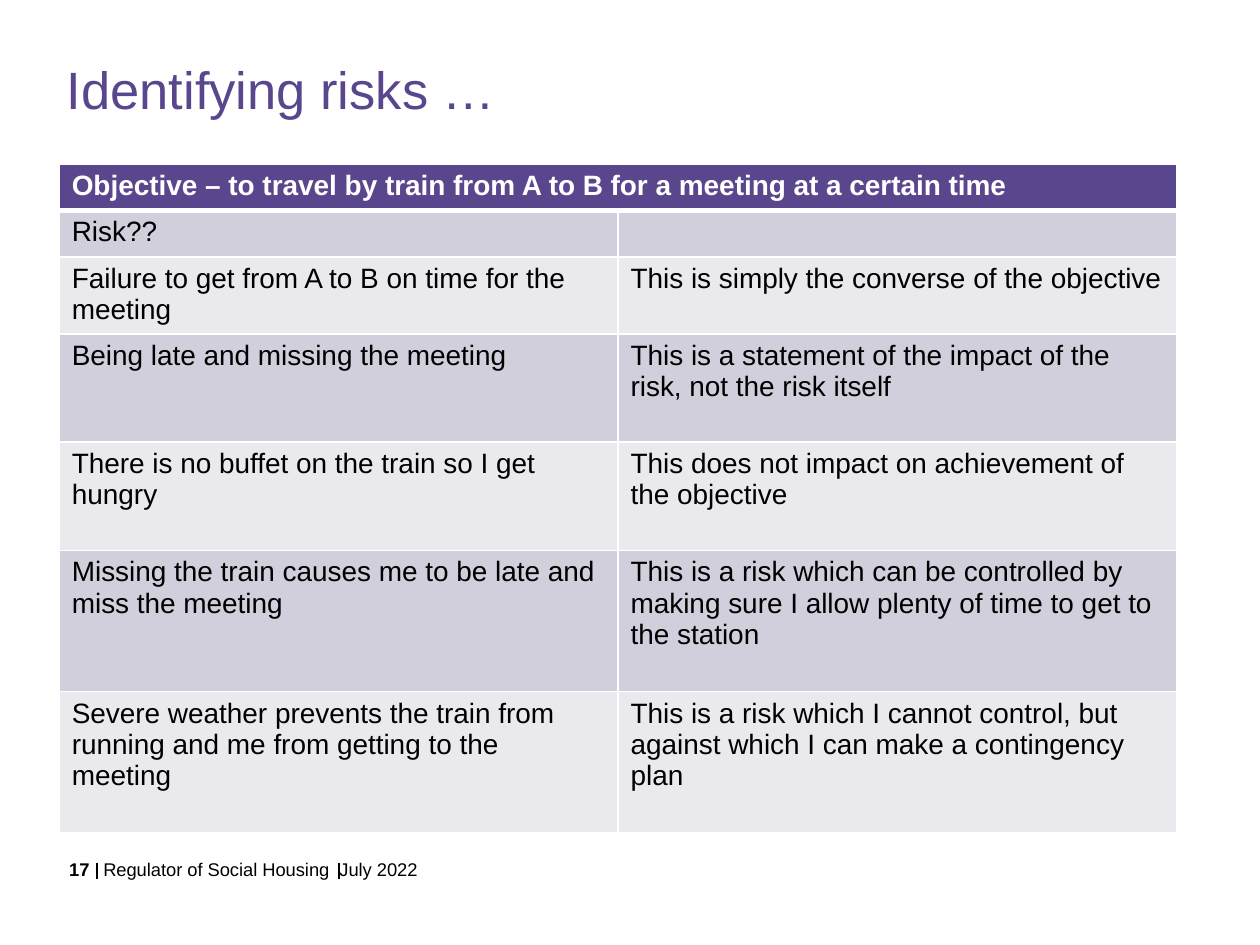
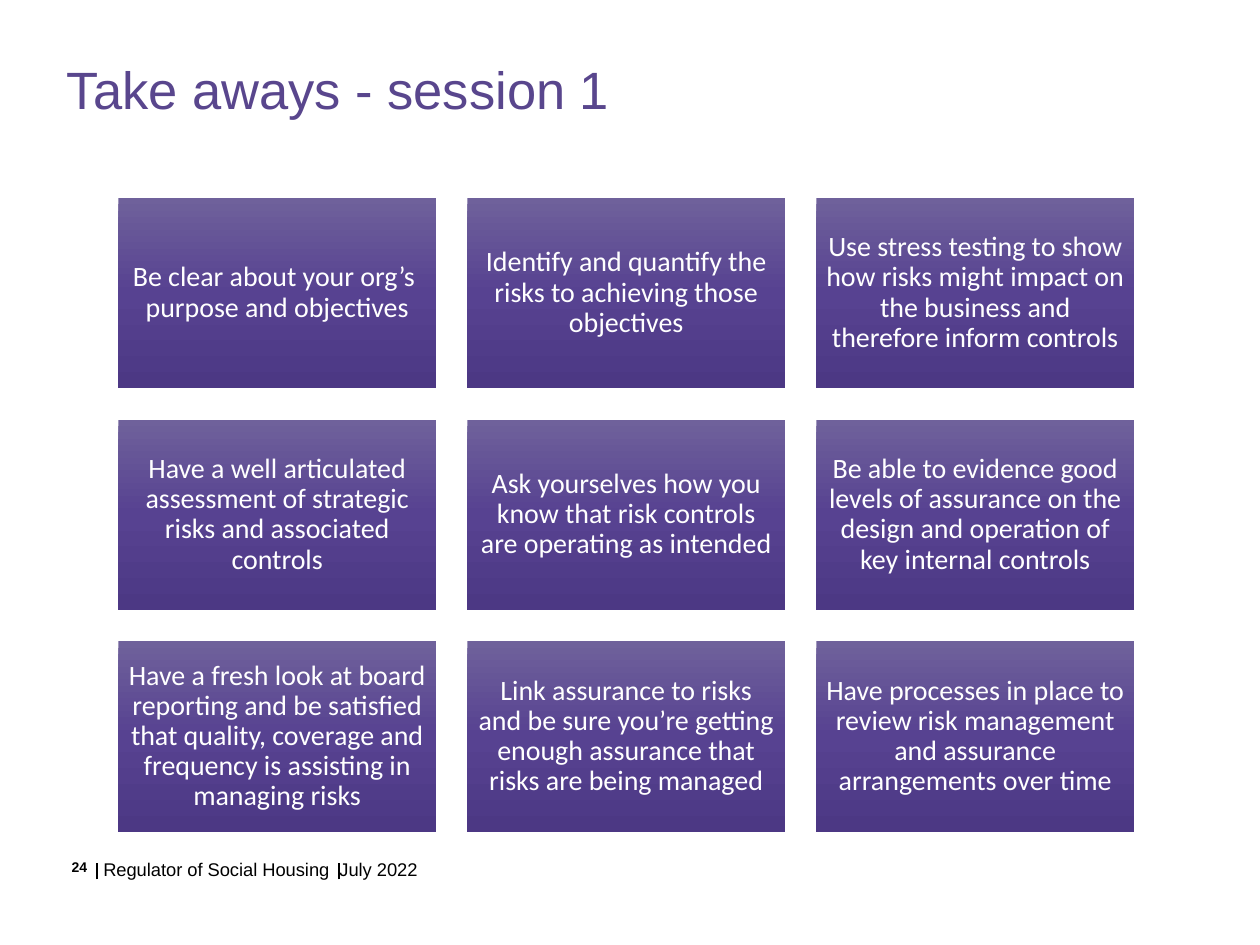
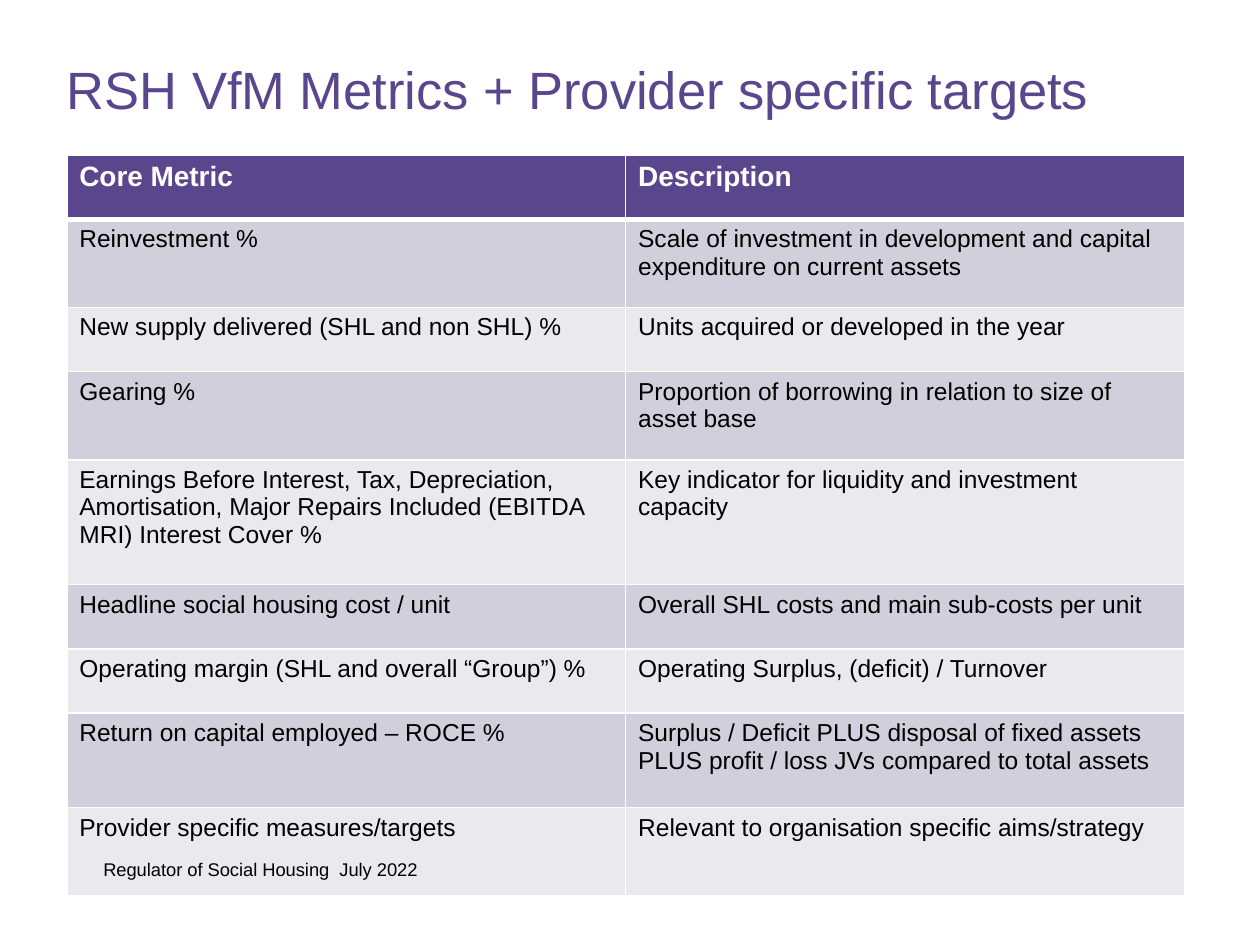
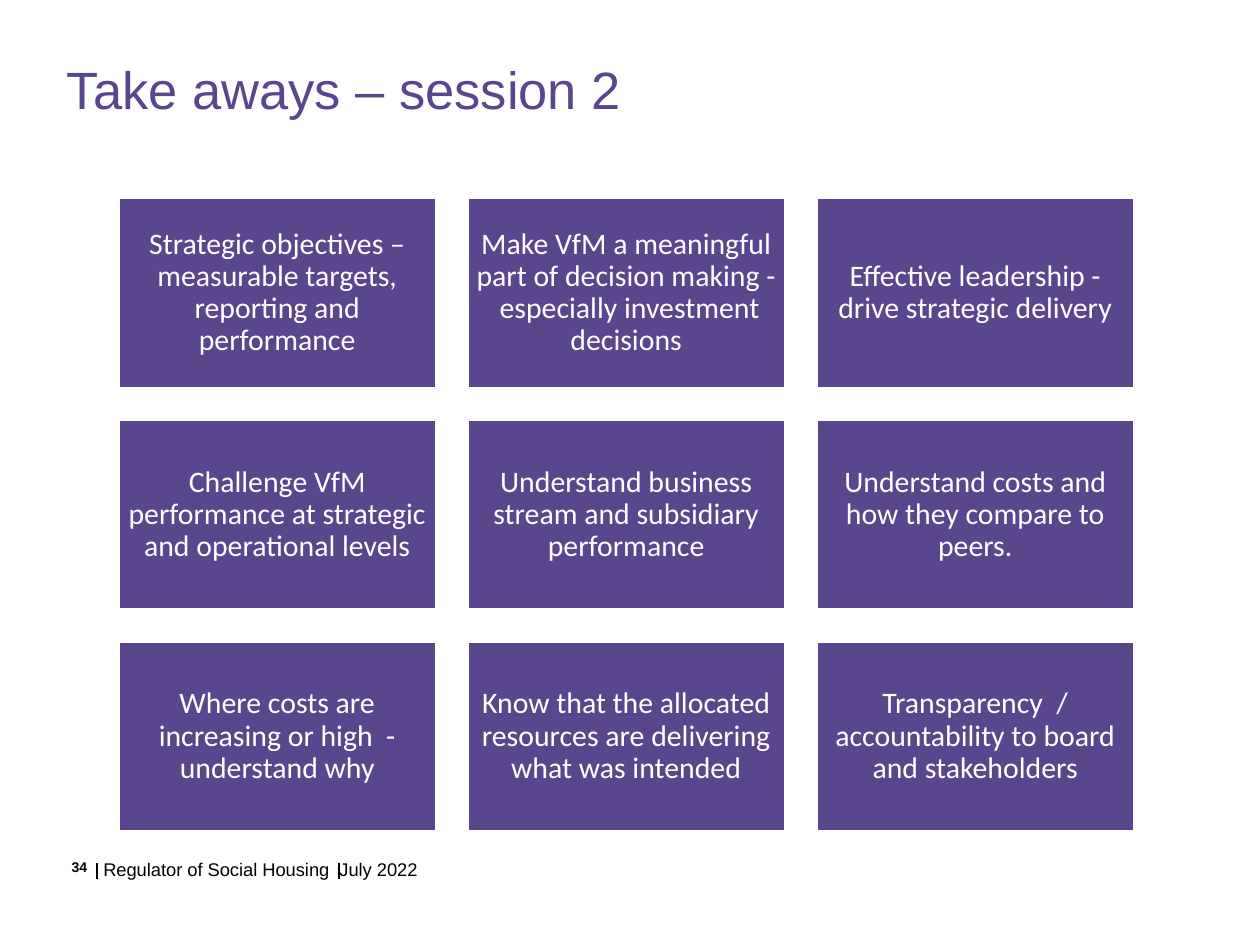
from copy import deepcopy

from lxml.etree import SubElement
from pptx import Presentation
from pptx.dml.color import RGBColor
from pptx.enum.shapes import MSO_CONNECTOR, MSO_SHAPE
from pptx.enum.text import MSO_ANCHOR, MSO_AUTO_SIZE, PP_ALIGN
from pptx.oxml.ns import qn
from pptx.util import Inches, Pt

PURPLE = RGBColor(0x59, 0x46, 0x8D)
WHITE = RGBColor(0xFF, 0xFF, 0xFF)
BLACK = RGBColor(0, 0, 0)
BAND_DARK = RGBColor(0xD1, 0xCF, 0xDB)
BAND_LIGHT = RGBColor(0xEA, 0xE9, 0xEE)
CARD_GRADIENT = [
    RGBColor(0x6F, 0x61, 0x9B),
    RGBColor(0x57, 0x42, 0x91),
    RGBColor(0x4C, 0x38, 0x84),
]

LEFT, CONTENT_WIDTH = 0.53, 8.87
FOOTER_TOP = 6.81
FOOTER_TEXT = "Regulator of Social Housing  July 2022"
DIVIDERS_X = (0.77, 2.69)

CARD_COLUMNS = 3
CARD_LEFT, CARD_TOP = 0.94, 1.57
CARD_WIDTH, CARD_HEIGHT = 2.52, 1.51
CARD_GAP = 0.25

RISK_ROWS = [
    ("Objective – to travel by train from A to B for a meeting at a certain time", ""),
    ("Risk??", ""),
    ("Failure to get from A to B on time for the\nmeeting",
     "This is simply the converse of the objective"),
    ("Being late and missing the meeting",
     "This is a statement of the impact of the risk, not the risk itself"),
    ("There is no buffet on the train so I get hungry",
     "This does not impact on achievement of the objective"),
    ("Missing the train causes me to be late and miss the meeting",
     "This is a risk which can be controlled by\n"
     "making sure I allow plenty of time to get to the station"),
    ("Severe weather prevents the train from\n"
     "running and me from getting to the meeting",
     "This is a risk which I cannot control, but\n"
     "against which I can make a contingency plan"),
]
RISK_HEIGHTS = [0.37, 0.37, 0.61, 0.86, 0.86, 1.12, 1.12]

METRIC_ROWS = [
    ("Core Metric", "Description"),
    ("Reinvestment %",
     "Scale of investment in development and capital expenditure on current assets"),
    ("New supply delivered (SHL and non SHL) %",
     "Units acquired or developed in the year"),
    ("Gearing %", "Proportion of borrowing in relation to size of asset base"),
    ("Earnings Before Interest, Tax, Depreciation, Amortisation, "
     "Major Repairs Included (EBITDA MRI) Interest Cover %",
     "Key indicator for liquidity and investment capacity"),
    ("Headline social housing cost / unit",
     "Overall SHL costs and main sub-costs per unit"),
    ("Operating margin (SHL and overall “Group”) %",
     "Operating Surplus, (deficit) / Turnover"),
    ("Return on capital employed – ROCE %",
     "Surplus / Deficit PLUS disposal of fixed assets "
     "PLUS profit / loss JVs compared to total assets"),
    ("Provider specific measures/targets",
     "Relevant to organisation specific aims/strategy"),
]
METRIC_HEIGHTS = [0.51, 0.7, 0.51, 0.7, 0.99, 0.51, 0.51, 0.75, 0.7]

SESSION_1 = [
    "Be clear about your org’s  purpose and objectives",
    "Identify and quantify the risks to achieving those objectives",
    "Use stress testing to show how risks might impact on the business "
    "and therefore inform controls",
    "Have a well articulated assessment of strategic risks and associated controls",
    "Ask yourselves how you know that risk controls are operating as intended",
    "Be able to evidence good levels of assurance on the design and operation "
    "of key internal controls",
    "Have a fresh look at board reporting and be satisfied that quality, coverage "
    "and frequency is assisting in managing risks",
    "Link assurance to risks and be sure you’re getting enough assurance "
    "that risks are being managed",
    "Have processes in place to review risk management and assurance "
    "arrangements over time",
]
SESSION_2 = [
    "Strategic objectives – measurable targets, reporting and performance",
    "Make VfM a meaningful part of decision making -  especially investment decisions",
    "Effective leadership - drive strategic delivery",
    "Challenge VfM performance at strategic and operational levels",
    "Understand business stream and subsidiary performance",
    "Understand costs and how they compare to peers.",
    "Where costs are increasing or high  - understand why",
    "Know that the allocated resources are delivering what was intended",
    "Transparency  / accountability to board and stakeholders",
]


def box(left, top, width, height):
    return [Inches(length) for length in (left, top, width, height)]


def write(frame, text, size, color, font="Arial", bold=False,
          align=PP_ALIGN.LEFT, spacing=None):
    frame.text = text
    for paragraph in frame.paragraphs:
        paragraph.alignment = align
        paragraph.line_spacing = spacing
        paragraph.font.color.rgb = color
        for name, value in {"name": font, "size": Pt(size), "bold": bold}.items():
            setattr(paragraph.font, name, value)


def set_frame(frame, inset=0, anchor=MSO_ANCHOR.TOP):
    margins = {f"margin_{side}": Inches(inset)
               for side in ("left", "top", "right", "bottom")}
    settings = {"word_wrap": True, "auto_size": MSO_AUTO_SIZE.NONE,
                "vertical_anchor": anchor, **margins}
    for name, value in settings.items():
        setattr(frame, name, value)


def prepare_layout(deck):
    """Keep only the title on the layout and give it the footer dividers."""
    layout = deck.slide_layouts.get_by_name("Title Only")
    for holder in list(layout.placeholders):
        if holder.placeholder_format.idx:
            holder._element.getparent().remove(holder._element)
    return layout


def add_dividers(slide):
    """Draw the footer dividers and hand them to the layout, shared by all slides."""
    for x in DIVIDERS_X:
        divider = slide.shapes.add_connector(
            MSO_CONNECTOR.STRAIGHT,
            Inches(x), Inches(6.98), Inches(x), Inches(6.85))
        divider.line.color.rgb = BLACK
        divider.line.width = Pt(0.75)
        SubElement(divider._element.spPr, qn("a:effectLst"))
        slide.slide_layout.shapes._spTree.append(divider._element)


def add_titled_slide(deck, layout, title):
    slide = deck.slides.add_slide(layout)
    holder = slide.shapes.title
    holder.left, holder.top, holder.width, holder.height = box(
        LEFT, 0.51, CONTENT_WIDTH, 0.79)
    set_frame(holder.text_frame)
    write(holder.text_frame, title, 30, PURPLE, spacing=0.9)
    return slide


def add_label(slide, area, text, size, **style):
    label = slide.shapes.add_textbox(*box(*area))
    set_frame(label.text_frame)
    write(label.text_frame, text, size, BLACK, **style)


def add_footer(slide, number=None, number_size=8):
    add_label(slide, (0.82, FOOTER_TOP, 3.6, 0.4), FOOTER_TEXT, 10.5)
    if number:
        add_label(slide, (LEFT, FOOTER_TOP, 0.2, 0.12), number, number_size,
                  bold=True, align=PP_ALIGN.CENTER)


def set_borders(cell, bottom):
    widths = {"a:lnL": 1, "a:lnR": 1, "a:lnT": 1, "a:lnB": bottom}
    for side, width in widths.items():
        line = SubElement(cell._tc.get_or_add_tcPr(), qn(side), w=str(Pt(width)))
        fill = SubElement(line, qn("a:solidFill"))
        SubElement(fill, qn("a:srgbClr"), val=str(WHITE))


def add_banded_table(slide, rows, heights, left, top, body_size):
    table = slide.shapes.add_table(
        len(rows), 2, *box(left, top, CONTENT_WIDTH, sum(heights))).table
    for row, height in zip(table.rows, heights):
        row.height = Inches(height)
    for r, texts in enumerate(rows):
        header = r == 0
        band = PURPLE if header else (BAND_LIGHT, BAND_DARK)[r % 2]
        for c, text in enumerate(texts):
            cell = table.cell(r, c)
            set_borders(cell, bottom=3 if header else 1)
            cell.fill.solid()
            cell.fill.fore_color.rgb = band
            write(cell.text_frame, text, 16 if header else body_size,
                  WHITE if header else BLACK, bold=header)
    return table


def fill_gradient(shape, colors):
    """Fill from top to bottom with evenly spaced colours."""
    shape.fill.gradient()
    shape.fill.gradient_angle = 270
    stop_list = shape._element.spPr.find(".//" + qn("a:gsLst"))
    while len(stop_list) < len(colors):
        stop_list.append(deepcopy(stop_list[0]))
    for i, (stop, color) in enumerate(zip(shape.fill.gradient_stops, colors)):
        stop.position = i / (len(colors) - 1)
        stop.color.rgb = color


def add_card_grid(slide, messages, size, gradient=None):
    for i, message in enumerate(messages):
        row, column = divmod(i, CARD_COLUMNS)
        card = slide.shapes.add_shape(MSO_SHAPE.RECTANGLE, *box(
            CARD_LEFT + column * (CARD_WIDTH + CARD_GAP),
            CARD_TOP + row * (CARD_HEIGHT + CARD_GAP),
            CARD_WIDTH, CARD_HEIGHT))
        card.shadow.inherit = False
        if gradient:
            fill_gradient(card, gradient)
            card.line.fill.background()
        else:
            card.fill.solid()
            card.fill.fore_color.rgb = PURPLE
            card.line.color.rgb = WHITE
            card.line.width = Pt(1.5)
        set_frame(card.text_frame, 0.07, MSO_ANCHOR.MIDDLE)
        write(card.text_frame, message, size, WHITE, font="Calibri",
              align=PP_ALIGN.CENTER, spacing=0.9)


def main():
    deck = Presentation()
    deck.slide_width, deck.slide_height = Inches(10), Inches(7.5)
    layout = prepare_layout(deck)

    risks = add_titled_slide(deck, layout, "Identifying risks …")
    add_dividers(risks)
    risk_table = add_banded_table(risks, RISK_ROWS, RISK_HEIGHTS, 0.47, 1.3, 16)
    risk_table.cell(0, 0).merge(risk_table.cell(0, 1))
    add_footer(risks, "17", 10.5)

    session_1 = add_titled_slide(deck, layout, "Take aways - session 1")
    add_card_grid(session_1, SESSION_1, 16, CARD_GRADIENT)
    add_footer(session_1, "24")

    metrics = add_titled_slide(
        deck, layout, "RSH VfM Metrics + Provider specific targets")
    add_banded_table(metrics, METRIC_ROWS, METRIC_HEIGHTS, LEFT, 1.23, 14)
    add_footer(metrics)

    session_2 = add_titled_slide(deck, layout, "Take aways – session 2")
    add_card_grid(session_2, SESSION_2, 17)
    add_footer(session_2, "34")

    deck.save("out.pptx")


if __name__ == "__main__":
    main()
